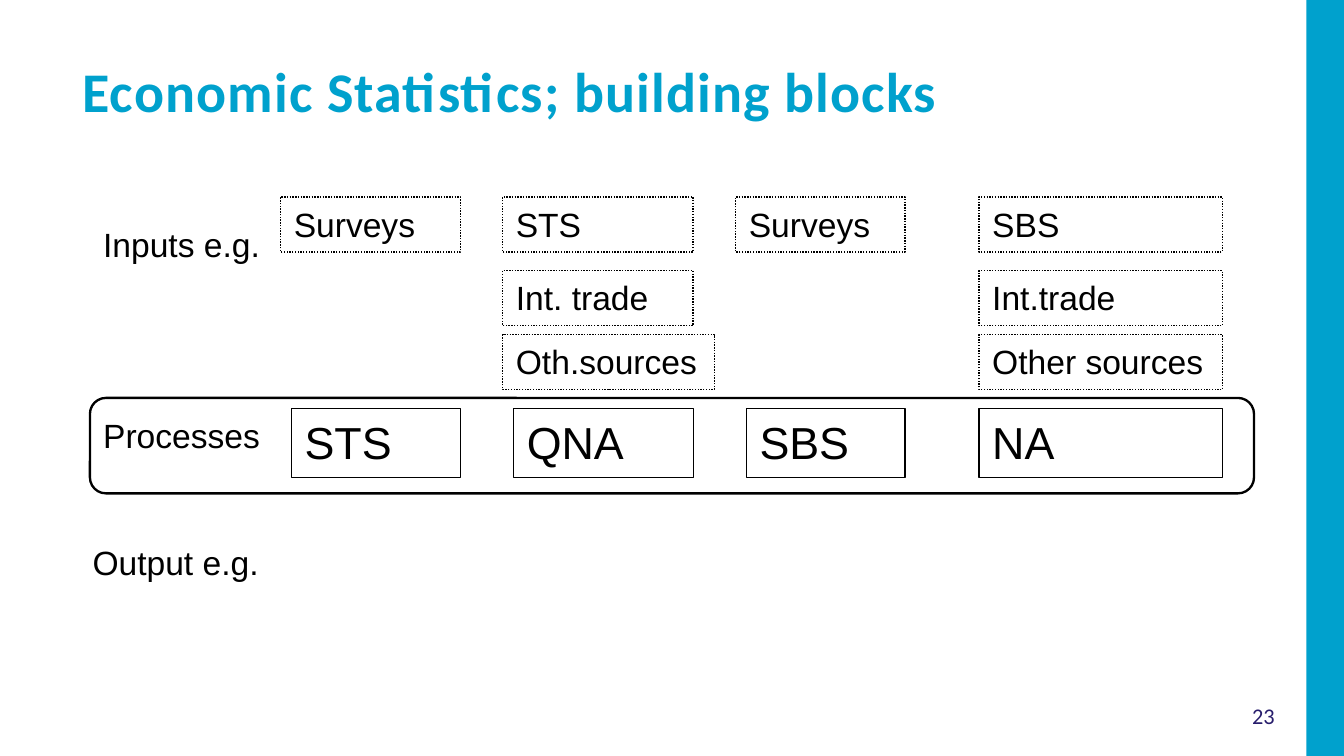
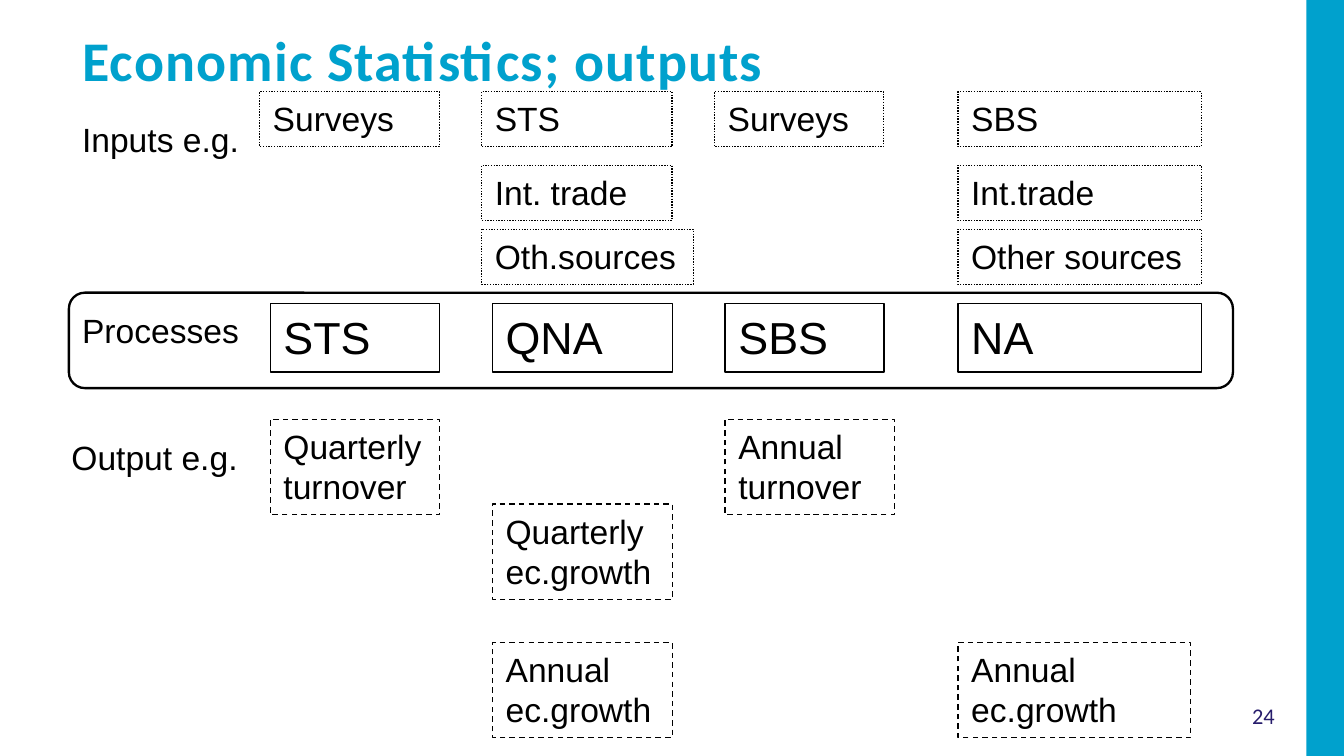
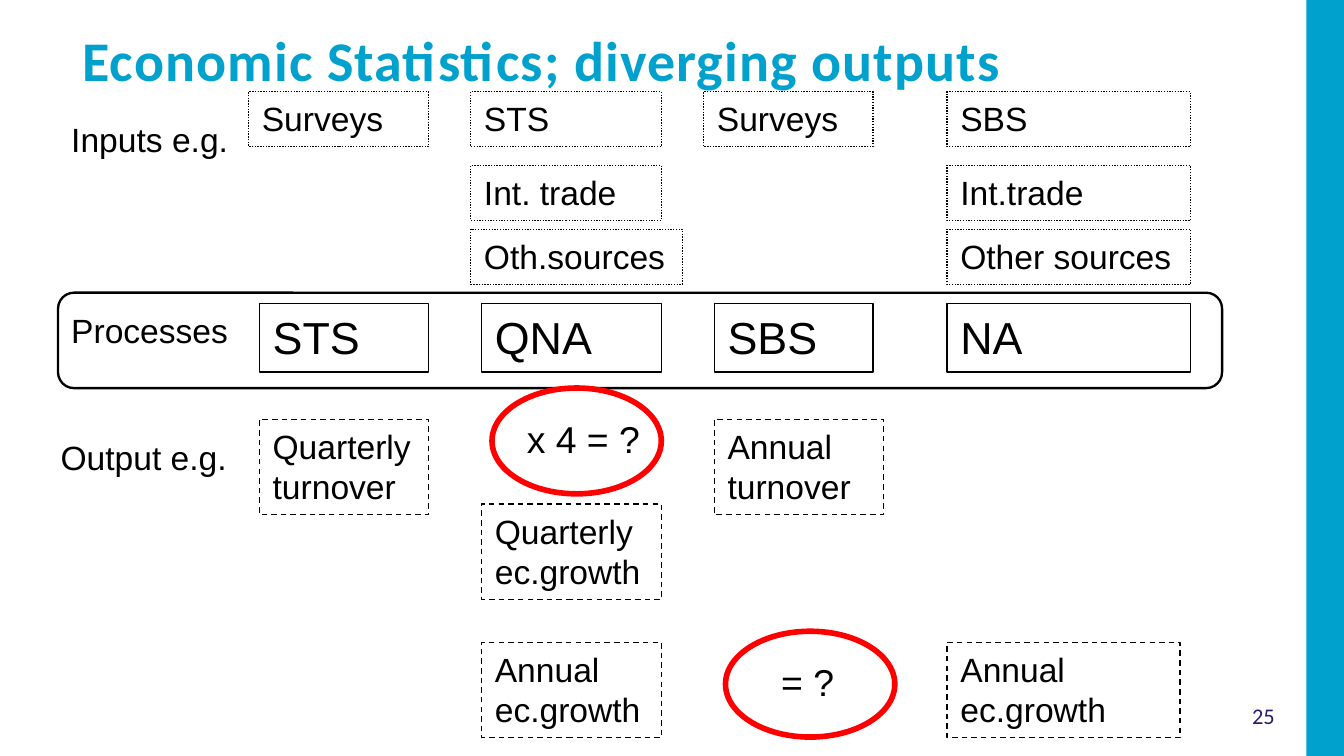
from dataclasses import dataclass

from pptx import Presentation
from pptx.dml.color import RGBColor
from pptx.enum.dml import MSO_LINE
from pptx.enum.shapes import MSO_SHAPE
from pptx.enum.text import MSO_ANCHOR, MSO_AUTO_SIZE, PP_ALIGN
from pptx.util import Pt


@dataclass(frozen=True)
class Theme:
    accent: RGBColor = RGBColor(0x00, 0xA1, 0xCD)
    number: RGBColor = RGBColor(0x27, 0x1D, 0x6C)
    ink: RGBColor = RGBColor(0x00, 0x00, 0x00)
    alert: RGBColor = RGBColor(0xFF, 0x00, 0x00)
    heading_font: str = "Calibri"
    body_font: str = "Arial"
    title_size: float = 30
    process_size: float = 24
    question_size: float = 20
    label_size: float = 18
    number_size: float = 12


THEME = Theme()
SLIDE_WIDTH, SLIDE_HEIGHT, BAND_WIDTH = 720, 405, 20.2

# Title, page number, title top, left and top of the process frame, extra parts
PAGES = [
    ("Economic Statistics; building blocks", 23, 26.6, 48.2, 213.2, ()),
    ("Economic Statistics; outputs", 24, 10.1, 36.9, 156.8, ("outputs",)),
    ("Economic Statistics; diverging outputs", 25, 10.1, 31.1, 156.8,
     ("outputs", "questions")),
]

# All places below are relative to the top left corner of the process frame.
FRAME_SIZE = (623.6, 51.1)
PROCESS_TOP, PROCESS_HEIGHT = 5.7, 36.9
INPUT_TOPS, INPUT_HEIGHT = (-107.7, -68.2, -34), 29.5
OUTPUT_TOPS, OUTPUT_HEIGHT = (67.8, 113.2, 187.3), 51.1

LABELS = [  # text, left, top, width
    ("Processes", 0, 5.7, 102),
    ("Inputs e.g.", 0, -96.5, 102),
    ("Output e.g.", -5.7, 73.5, 113.4),
]

COLUMNS = [  # inputs: (text, width); outputs: (text, row, width)
    dict(process="STS", left=107.9, width=90.7, input_left=102.1,
         inputs=[("Surveys", 96.4)],
         outputs=[("Quarterly turnover", 0, 90.7)]),
    dict(process="QNA", left=226.9, width=96.4, input_left=221.1,
         inputs=[("STS", 102.1), ("Int. trade", 102.1), ("Oth.sources", 113.4)],
         outputs=[("Quarterly ec.growth", 1, 96.4), ("Annual ec.growth", 2, 96.4)]),
    dict(process="SBS", left=351.6, width=85, input_left=345.9,
         inputs=[("Surveys", 90.7)],
         outputs=[("Annual turnover", 0, 90.7)]),
    dict(process="NA", left=476.3, width=130.4, input_left=476.3,
         inputs=[("SBS", 130.4), ("Int.trade", 130.4), ("Other sources", 130.4)],
         outputs=[("Annual ec.growth", 2, 124.7)]),
]

QUESTIONS = [  # text, left, top, text indent, text width
    ("x 4 = ?", 232.5, 51.1, 11.5, 79.4),
    ("= ?", 357.6, 181.4, 22.7, 56.7),
]
ELLIPSE_SIZE = (90.7, 56.7)
QUESTION_DROP, QUESTION_HEIGHT = 11.5, 31


def place(shape, left, top, width, height):
    shape.left, shape.top = Pt(left), Pt(top)
    shape.width, shape.height = Pt(width), Pt(height)


def write(shape, text, size=THEME.label_size, color=THEME.ink, font=THEME.body_font,
          bold=False, align=PP_ALIGN.LEFT, anchor=MSO_ANCHOR.TOP, spacing=None):
    frame = shape.text_frame
    frame.word_wrap = True
    frame.auto_size = MSO_AUTO_SIZE.NONE
    frame.vertical_anchor = anchor
    para = frame.paragraphs[0]
    para.alignment = align
    span = para.add_run()
    span.text = text
    span.font.size, span.font.name, span.font.bold = Pt(size), font, bold
    span.font.color.rgb = color
    if spacing:
        span._r.get_or_add_rPr().set("spc", str(spacing))


def add_text(page, text, left, top, width, height, **style):
    box = page.shapes.add_textbox(Pt(left), Pt(top), Pt(width), Pt(height))
    write(box, text, **style)


def add_outline(page, left, top, width, height, kind=MSO_SHAPE.RECTANGLE,
                color=THEME.ink, weight=0.75, dash=None):
    shape = page.shapes.add_shape(kind, Pt(left), Pt(top), Pt(width), Pt(height))
    shape.shadow.inherit = False
    shape.fill.background()
    shape.line.color.rgb = color
    shape.line.width = Pt(weight)
    if dash:
        shape.line.dash_style = dash
    return shape


def add_box(page, text, left, top, width, height, dash=None, **style):
    write(add_outline(page, left, top, width, height, dash=dash), text, **style)


def add_band(page):
    """Draw the side band and move it to the layout that all pages share."""
    band = page.shapes.add_shape(MSO_SHAPE.RECTANGLE, Pt(SLIDE_WIDTH - BAND_WIDTH), 0,
                                 Pt(BAND_WIDTH), Pt(SLIDE_HEIGHT))
    band.shadow.inherit = False
    band.fill.solid()
    band.fill.fore_color.rgb = THEME.accent
    band.line.fill.background()
    band.element.nvSpPr.cNvPr.set("id", "20")
    page.slide_layout.shapes.element.append(band.element)


def add_heading(page, title, number, top):
    place(page.shapes.title, 36.9, top, 601, 39.6)
    write(page.shapes.title, title, size=THEME.title_size, color=THEME.accent,
          font=THEME.heading_font, bold=True, spacing=60)
    add_text(page, str(number), 653.8, 370.8, 46, 25.2, size=THEME.number_size,
             color=THEME.number, font=THEME.heading_font,
             align=PP_ALIGN.CENTER, anchor=MSO_ANCHOR.MIDDLE)


def add_diagram(page, x, y, parts):
    add_outline(page, x, y, *FRAME_SIZE, kind=MSO_SHAPE.ROUNDED_RECTANGLE, weight=1.25)
    for text, left, top, width in LABELS:
        add_text(page, text, x + left, y + top, width, 28.8)
    for column in COLUMNS:
        left = x + column["left"]
        add_box(page, column["process"], left, y + PROCESS_TOP, column["width"],
                PROCESS_HEIGHT, size=THEME.process_size)
        for (text, width), top in zip(column["inputs"], INPUT_TOPS):
            add_box(page, text, x + column["input_left"], y + top, width,
                    INPUT_HEIGHT, dash=MSO_LINE.ROUND_DOT)
        if "outputs" in parts:
            for text, row, width in column["outputs"]:
                add_box(page, text, left, y + OUTPUT_TOPS[row], width,
                        OUTPUT_HEIGHT, dash=MSO_LINE.DASH)
    if "questions" in parts:
        for text, left, top, indent, width in QUESTIONS:
            add_text(page, text, x + left + indent, y + top + QUESTION_DROP, width,
                     QUESTION_HEIGHT, size=THEME.question_size)
            add_outline(page, x + left, y + top, *ELLIPSE_SIZE, kind=MSO_SHAPE.OVAL,
                        color=THEME.alert, weight=3)


def main():
    deck = Presentation()
    deck.slide_width, deck.slide_height = Pt(SLIDE_WIDTH), Pt(SLIDE_HEIGHT)
    layout = deck.slide_layouts.get_by_name("Title Only")
    for index, (title, number, title_top, left, top, parts) in enumerate(PAGES):
        page = deck.slides.add_slide(layout)
        if index == 0:
            add_band(page)
        add_heading(page, title, number, title_top)
        add_diagram(page, left, top, parts)
    deck.save("out.pptx")


if __name__ == "__main__":
    main()
